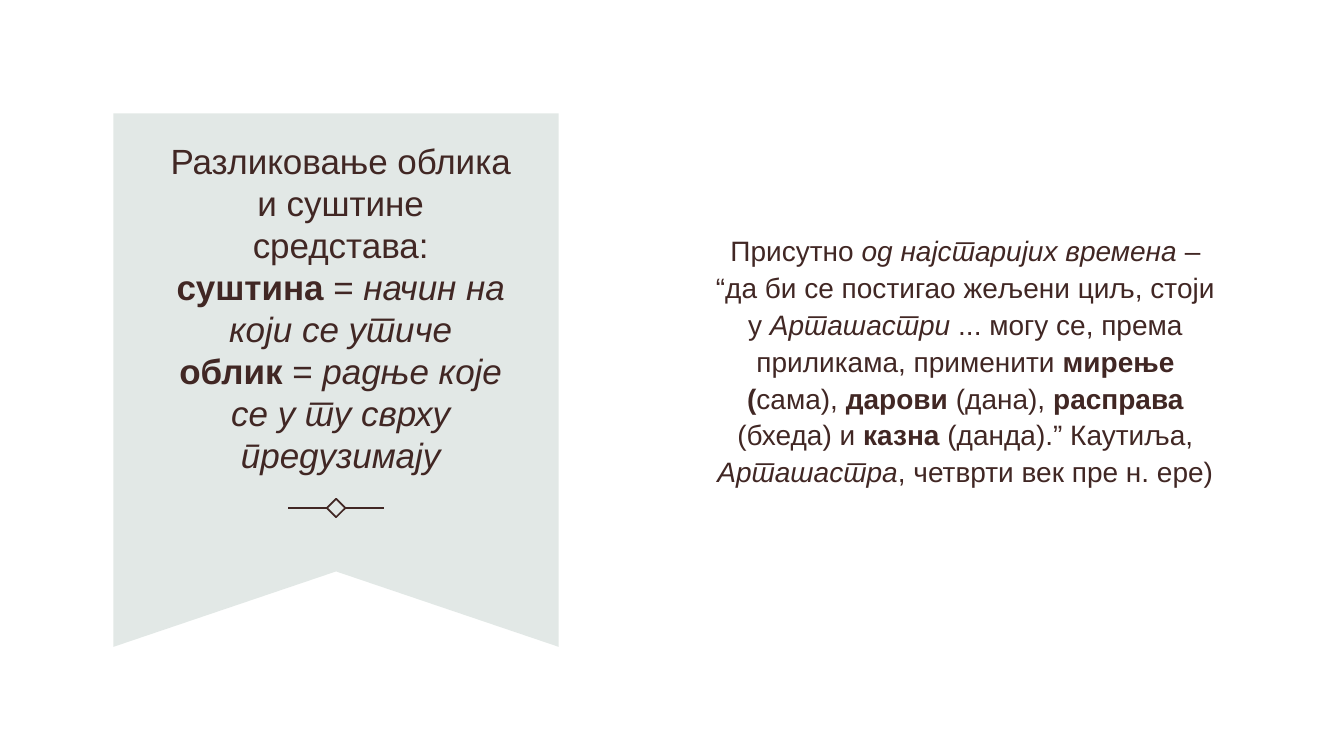
from copy import deepcopy
from pptx import Presentation
from pptx.dml.color import RGBColor
from pptx.enum.shapes import MSO_CONNECTOR, MSO_SHAPE
from pptx.enum.text import MSO_ANCHOR, MSO_AUTO_SIZE, PP_ALIGN
from pptx.oxml.ns import qn
from pptx.util import Cm, Pt

HUES = {"ink": "412724", "sage": "E2E8E6"}
FRAME = {"word_wrap": True, "auto_size": MSO_AUTO_SIZE.NONE,
         "vertical_anchor": MSO_ANCHOR.MIDDLE}
STYLES = {"": {}, "b": {"bold": True}, "i": {"italic": True}}

TITLE = [
    ("Разликовање облика и суштине средстава:\n", ""),
    ("суштина", "b"), (" = ", ""), ("начин на који се утиче\n", "i"),
    ("облик", "b"), (" = ", ""),
    ("радње које се у ту сврху предузимају", "i"),
]
BODY = [
    ("Присутно ", ""), ("од најстаријих времена ", "i"),
    ("– “да би се постигао жељени циљ, стоји у ", ""),
    ("Арташастри", "i"),
    (" ... могу се, према приликама, применити ", ""),
    ("мирење (", "b"), ("сама), ", ""), ("дарови", "b"),
    (" (дана), ", ""), ("расправа", "b"), (" (бхеда) и ", ""),
    ("казна", "b"), (" (данда).” Каутиља, ", ""),
    ("Арташастра", "i"), (", четврти век пре н. ере)", ""),
]


def hue(name):
    return RGBColor.from_string(HUES[name])


def apply(item, values):
    for key, value in values.items():
        setattr(item, key, value)


def place(shape, left, top, width, height):
    apply(shape, {"left": Cm(left), "top": Cm(top),
                  "width": Cm(width), "height": Cm(height)})


def write(shape, parts, size, lines=1.0, before=0):
    frame = shape.text_frame
    apply(frame, FRAME)
    para = frame.paragraphs[0]
    apply(para, {"alignment": PP_ALIGN.CENTER, "line_spacing": lines,
                 "space_before": Pt(before)})
    for text, style in parts:
        run = para.add_run()
        run.text = text.rstrip("\n")
        base = {"name": "Arial", "size": Pt(size),
                "bold": False, "italic": False}
        apply(run.font, base | STYLES[style])
        run.font.color.rgb = hue("ink")
        props = run._r.get_or_add_rPr()
        props.set("lang", "sr-Cyrl-RS")
        if text.endswith("\n"):
            para.add_line_break()
            para._p[-1].insert(0, deepcopy(props))


def draw_flag(slide, left, top, right, notch, foot):
    mid = (left + right) / 2
    pen = slide.shapes.build_freeform(Cm(left), Cm(top))
    spots = [(right, top), (right, foot), (mid, notch), (left, foot)]
    pen.add_line_segments([(Cm(x), Cm(y)) for x, y in spots])
    flag = pen.convert_to_shape()
    flag.shadow.inherit = False
    flag.fill.solid()
    flag.fill.fore_color.rgb = hue("sage")
    flag.line.fill.background()


def ink_line(line):
    line.color.rgb = hue("ink")
    line.width = Pt(1.25)


def draw_gem(slide, mid, level, side=0.33):
    gem = slide.shapes.add_shape(
        MSO_SHAPE.RECTANGLE, Cm(mid - side / 2), Cm(level - side / 2),
        Cm(side), Cm(side))
    gem.rotation = 45
    gem.shadow.inherit = False
    gem.fill.background()
    ink_line(gem.line)


def draw_rule(slide, start, end, level):
    rule = slide.shapes.add_connector(
        MSO_CONNECTOR.STRAIGHT, Cm(start), Cm(level), Cm(end), Cm(level))
    ink_line(rule.line)
    props = rule._element.spPr
    props.append(props.makeelement(qn("a:effectLst"), {}))


def main():
    deck = Presentation()
    apply(deck, {"slide_width": Cm(33.87), "slide_height": Cm(19.05)})
    slide = deck.slides.add_slide(deck.slide_layouts[5])

    draw_flag(slide, 2.86, 2.86, 14.08, 14.4, 16.3)
    mid, level = 8.47, 12.8
    draw_gem(slide, mid, level)
    for side in (1, -1):
        draw_rule(slide, mid + side * 0.23, mid + side * 1.21, level)

    title = slide.shapes.title
    slide.shapes._spTree.append(title._element)
    place(title, 3.91, 3.76, 9.35, 7.98)
    write(title, TITLE, 25)

    body = slide.shapes.add_textbox(Cm(17.75), Cm(2), Cm(13.16), Cm(15.04))
    write(body, BODY, 20, 1.1, 10)
    body.text_frame.margin_bottom = Cm(1.06)

    deck.save("out.pptx")


if __name__ == "__main__":
    main()
